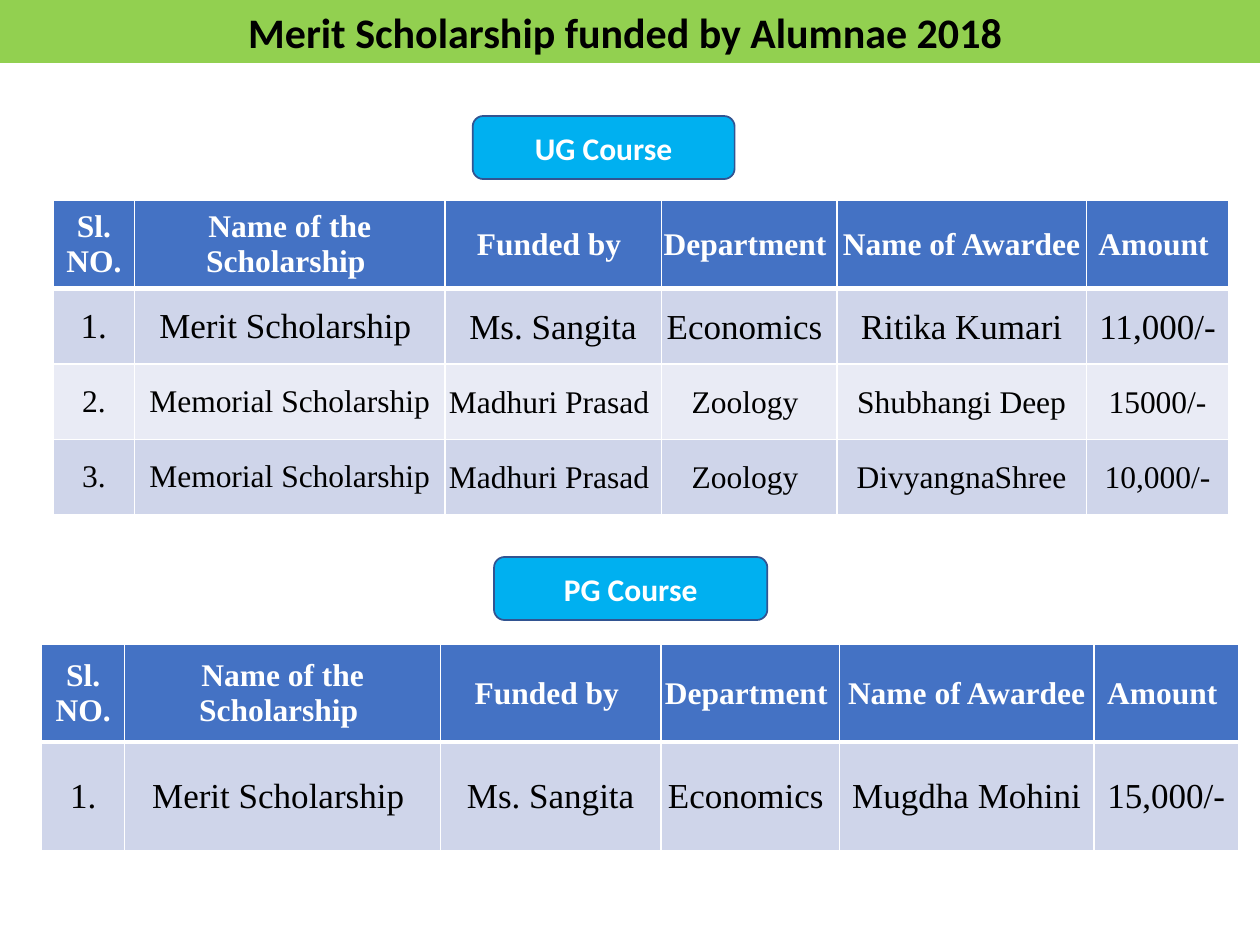
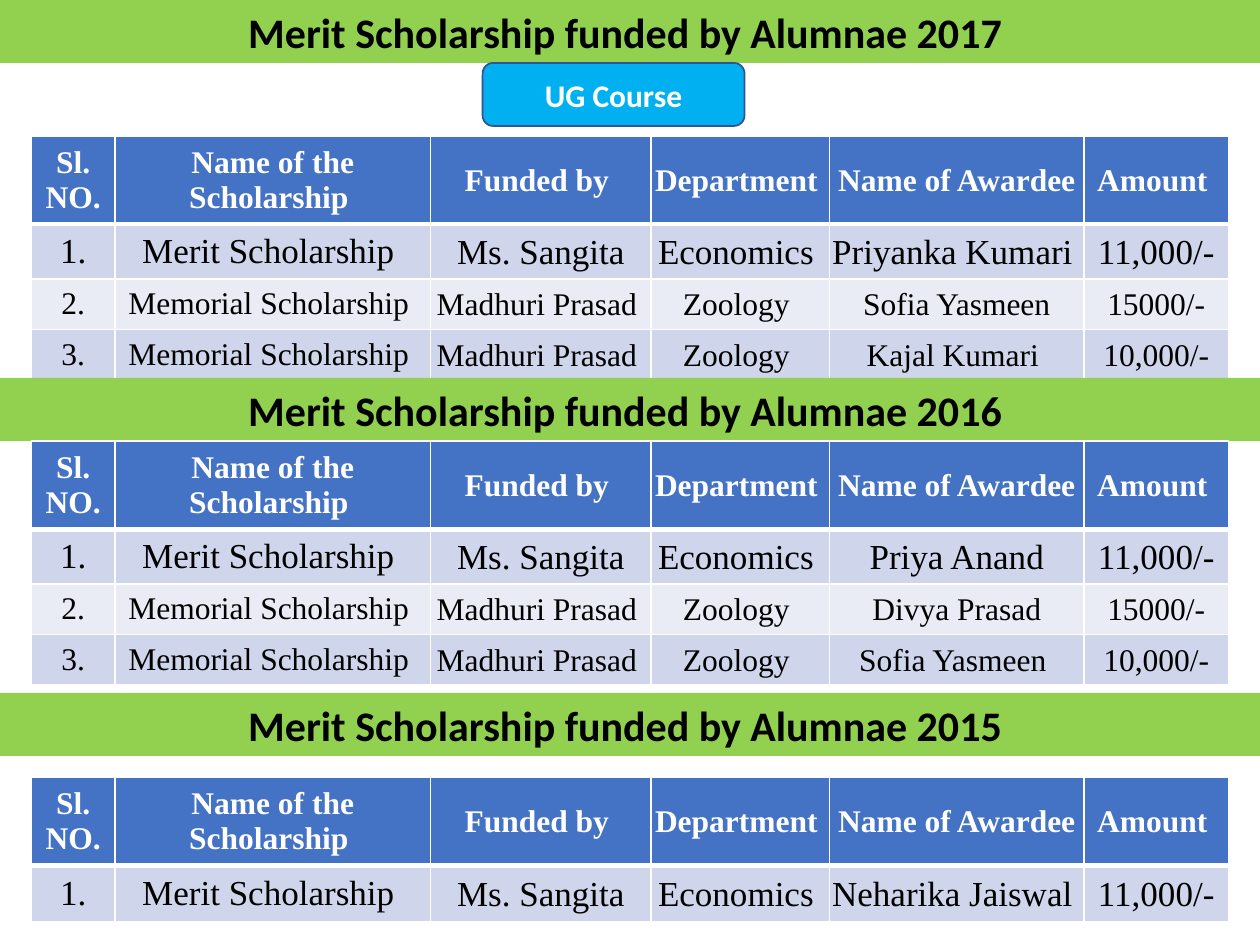
"""Build two slides of merit scholarship tables, one section per year and course."""
from dataclasses import dataclass
from typing import Any, Optional

from lxml import etree
from pptx import Presentation
from pptx import util as u
from pptx.dml.color import RGBColor
from pptx.enum import shapes, text
from pptx.oxml import ns


@dataclass(frozen=True)
class Theme:
    """Colours, fonts and type sizes shared by the slides."""
    band: str = "92D050"
    badge: str = "00B0F0"
    badge_line: str = "325491"
    header: str = "4472C4"
    stripes: tuple[str, str] = ("CFD5EA", "E9EBF5")
    white: str = "FFFFFF"
    black: str = "000000"
    heading_font: str = "Calibri"
    table_font: str = "Times New Roman"
    title_size: int = 24
    lead_size: int = 20
    text_size: int = 18
    rule: int = 1
    header_rule: int = 3


@dataclass(frozen=True)
class Award:
    """One scholarship, the same every year."""
    scholarship: str
    funder: str
    department: str
    amount: str


@dataclass(frozen=True)
class Badge:
    """A rounded course label."""
    label: str
    left: float
    top: float
    width: float = 5.28


@dataclass(frozen=True)
class AwardTable:
    """Where a table stands and who received the awards."""
    left: float
    top: float
    width: float
    row_heights: tuple[float, ...]
    awardees: tuple[str, ...]
    first_amount: str = "11,000/-"


@dataclass(frozen=True)
class Section:
    """An optional year band, a table and an optional badge."""
    table: AwardTable
    year: Optional[int] = None
    band_top: float = 0
    badge: Optional[Badge] = None


THEME = Theme()
PAGE_WIDTH, PAGE_HEIGHT, BAND_HEIGHT = 25.4, 19.05, 1.27
COLUMN_SHARES = (0.66, 2.51, 1.75, 1.42, 2.02, 1.15)
HEADERS = ("Sl. NO. ", "Name of the Scholarship ", "Funded by ",
           "Department ", "Name of Awardee", "Amount ")
MEMORIAL = ("Memorial Scholarship ", "Madhuri Prasad ", "Zoology ")
AWARDS = (
    Award("Merit Scholarship ", "Ms. Sangita", "Economics ", ""),
    Award(*MEMORIAL, "15000/-"),
    Award(*MEMORIAL, "10,000/-"),
)
TIGHT_MARGINS = {"margin_left": u.Cm(0.03), "margin_top": u.Cm(0.03),
                 "margin_right": u.Cm(0.03), "margin_bottom": u.Cm(0)}
COMPACT_ROWS = (1.75, 1.09, 1.02, 1.02)

SLIDES = (
    (
        Section(AwardTable(1.07, 4.04, 23.7, (1.75, 1.52, 1.52, 1.52),
                           ("Ritika Kumari", "Shubhangi Deep", "DivyangnaShree")),
                2018, badge=Badge("UG Course", 9.53, 2.34)),
        Section(AwardTable(0.84, 12.98, 24.13, (1.98, 2.18),
                           ("Mugdha Mohini",), "15,000/-"),
                badge=Badge("PG Course", 9.96, 11.23, 5.51)),
    ),
    (
        Section(AwardTable(0.64, 2.74, 24.13, COMPACT_ROWS,
                           ("Priyanka Kumari ", "Sofia Yasmeen", "Kajal Kumari ")),
                2017, badge=Badge("UG Course", 9.73, 1.27)),
        Section(AwardTable(0.64, 8.89, 24.13, COMPACT_ROWS,
                           ("Priya Anand", "Divya Prasad", "Sofia Yasmeen ")),
                2016, 7.62),
        Section(AwardTable(0.64, 15.67, 24.13, (1.75, 1.14), ("Neharika Jaiswal ",)),
                2015, 13.97),
    ),
)


def set_values(target: Any, values: dict[str, Any]) -> None:
    """Set each named attribute of the target."""
    for name, value in values.items():
        setattr(target, name, value)


def write(frame: Any, words: str, font: str, size: int, colour: str, bold: bool) -> None:
    """Write one centred paragraph into a text frame."""
    para = frame.paragraphs[0]
    para.alignment = text.PP_ALIGN.CENTER
    span = para.add_run()
    span.text = words
    set_values(span.font, {"name": font, "size": u.Pt(size), "bold": bold})
    span.font.color.rgb = RGBColor.from_string(colour)


def add_box(page: Any, kind: Any, left: float, top: float, width: float, fill: str) -> Any:
    """Add a flat filled shape of band height."""
    box = page.shapes.add_shape(kind, *map(u.Cm, (left, top, width, BAND_HEIGHT)))
    box.shadow.inherit = False
    box.fill.solid()
    box.fill.fore_color.rgb = RGBColor.from_string(fill)
    return box


def add_band(page: Any, year: int, top: float) -> None:
    """Add the full-width heading of a year."""
    box = add_box(page, shapes.MSO_SHAPE.RECTANGLE, 0, top, PAGE_WIDTH, THEME.band)
    box.line.fill.background()
    set_values(box.text_frame, {"word_wrap": True,
                                "auto_size": text.MSO_AUTO_SIZE.SHAPE_TO_FIT_TEXT,
                                "vertical_anchor": text.MSO_ANCHOR.TOP})
    write(box.text_frame, f"Merit Scholarship funded by Alumnae {year} ",
          THEME.heading_font, THEME.title_size, THEME.black, True)


def add_badge(page: Any, badge: Badge) -> None:
    """Add a course label."""
    box = add_box(page, shapes.MSO_SHAPE.ROUNDED_RECTANGLE,
                  badge.left, badge.top, badge.width, THEME.badge)
    box.line.color.rgb = RGBColor.from_string(THEME.badge_line)
    box.line.width = u.Pt(1)
    set_values(box.text_frame, {"word_wrap": True,
                                "vertical_anchor": text.MSO_ANCHOR.MIDDLE})
    write(box.text_frame, badge.label, THEME.heading_font, THEME.text_size,
          THEME.white, True)


def add_borders(cell: Any, row: int) -> None:
    """Rule a cell in white, heavier between the header and the body."""
    heavy_side = {0: "lnB", 1: "lnT"}.get(row)
    properties = cell._tc.get_or_add_tcPr()
    for side in ("lnL", "lnR", "lnT", "lnB"):
        points = THEME.header_rule if side == heavy_side else THEME.rule
        line = etree.SubElement(properties, ns.qn(f"a:{side}"), w=str(u.Pt(points)))
        fill = etree.SubElement(line, ns.qn("a:solidFill"))
        etree.SubElement(fill, ns.qn("a:srgbClr"), val=THEME.white)


def fill_cell(cell: Any, row: int, column: int, words: str) -> None:
    """Format and write one table cell."""
    is_header = row == 0
    add_borders(cell, row)
    cell.fill.solid()
    cell.fill.fore_color.rgb = RGBColor.from_string(
        THEME.header if is_header else THEME.stripes[(row - 1) % 2])
    cell.vertical_anchor = text.MSO_ANCHOR.MIDDLE
    if column > 1:
        set_values(cell, TIGHT_MARGINS)
    write(cell.text_frame, words, THEME.table_font,
          THEME.lead_size if row == 1 else THEME.text_size,
          THEME.white if is_header else THEME.black, is_header)


def add_award_table(page: Any, table: AwardTable) -> None:
    """Add a table with a header and one row for each awardee."""
    rows = [HEADERS] + [
        (f"{number}.", award.scholarship, award.funder, award.department, awardee,
         award.amount or table.first_amount)
        for number, (award, awardee) in enumerate(zip(AWARDS, table.awardees), 1)]
    grid = page.shapes.add_table(
        len(rows), len(HEADERS),
        *map(u.Cm, (table.left, table.top, table.width, sum(table.row_heights)))).table
    for column, share in zip(grid.columns, COLUMN_SHARES):
        column.width = u.Cm(table.width * share / sum(COLUMN_SHARES))
    for row, (height, values) in enumerate(zip(table.row_heights, rows)):
        grid.rows[row].height = u.Cm(height)
        for column, words in enumerate(values):
            fill_cell(grid.cell(row, column), row, column, words)


def main() -> None:
    """Build and save the deck."""
    deck = Presentation()
    set_values(deck, {"slide_width": u.Cm(PAGE_WIDTH), "slide_height": u.Cm(PAGE_HEIGHT)})
    for sections in SLIDES:
        page = deck.slides.add_slide(deck.slide_layouts[6])
        for section in sections:
            if section.year:
                add_band(page, section.year, section.band_top)
            add_award_table(page, section.table)
            if section.badge:
                add_badge(page, section.badge)
    deck.save("out.pptx")


if __name__ == "__main__":
    main()
